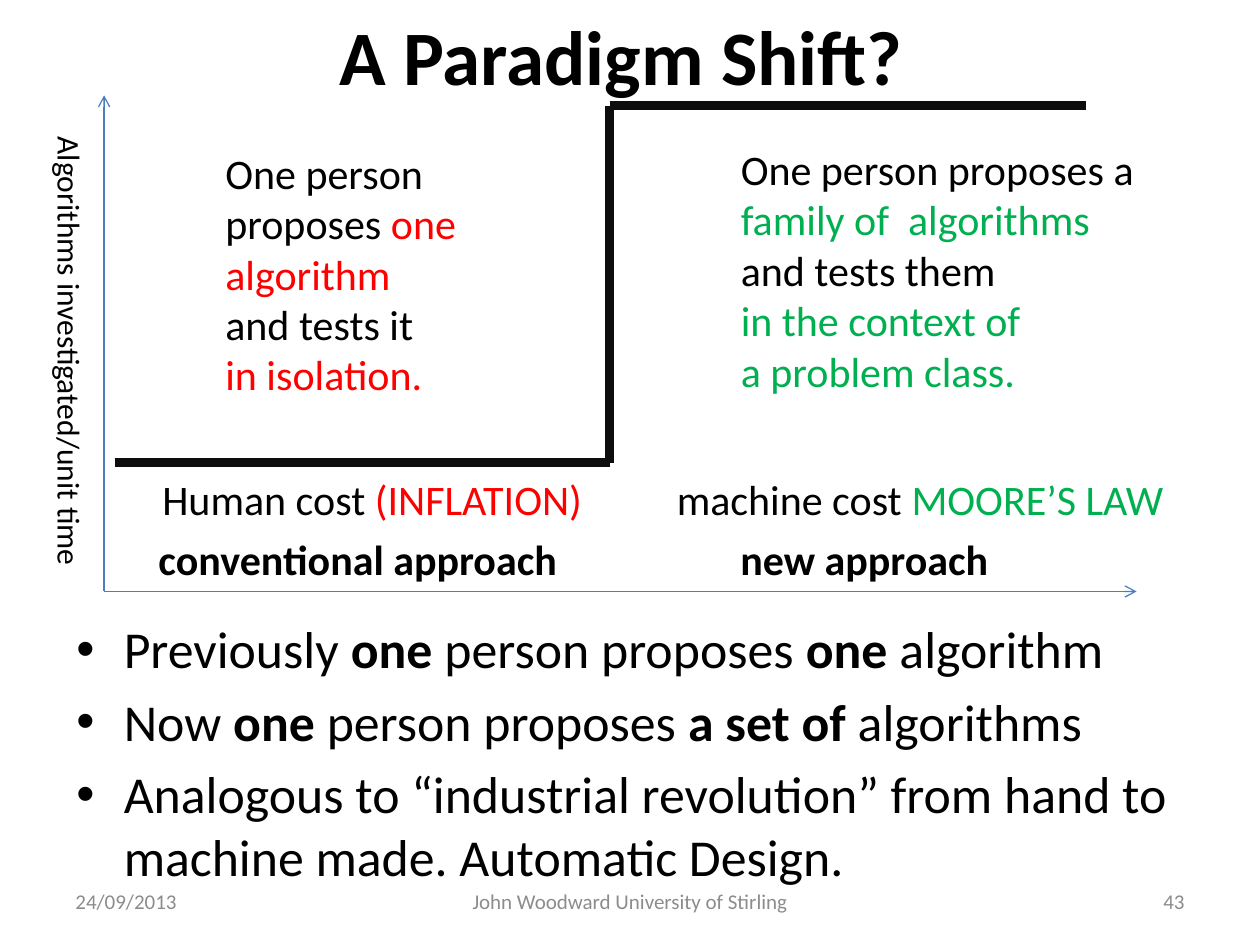
from dataclasses import dataclass
from itertools import pairwise

from lxml import etree
from pptx import Presentation
from pptx.dml.color import RGBColor
from pptx.enum.shapes import MSO_CONNECTOR
from pptx.enum.text import MSO_ANCHOR, MSO_AUTO_SIZE, PP_ALIGN
from pptx.oxml.ns import qn
from pptx.util import Pt

STRAIGHT = MSO_CONNECTOR.STRAIGHT
TOP, MIDDLE = MSO_ANCHOR.TOP, MSO_ANCHOR.MIDDLE
LEFT, CENTER, RIGHT = PP_ALIGN.LEFT, PP_ALIGN.CENTER, PP_ALIGN.RIGHT
NO_AUTOFIT = MSO_AUTO_SIZE.NONE


@dataclass(frozen=True)
class Theme:
    """Colours, font and type sizes of the slide."""

    font: str = "Calibri"
    text: str = "000000"
    old: str = "FF0000"
    new: str = "00B050"
    axis: str = "4B7EBC"
    step: str = "0D0D0D"
    footer: str = "8C8C8C"
    title_size: float = 44
    body_size: float = 29.6
    diagram_size: float = 24
    axis_size: float = 18
    footer_size: float = 12


THEME = Theme()

OLD_WAY = [
    [("One person", THEME.text)],
    [("proposes ", THEME.text), ("one", THEME.old)],
    [("algorithm", THEME.old)],
    [("and tests it", THEME.text)],
    [("in isolation.", THEME.old)],
]
NEW_WAY = [
    [("One person proposes a", THEME.text)],
    [("family of  algorithms", THEME.new)],
    [("and tests them", THEME.text)],
    [("in the context of", THEME.new)],
    [("a problem class.", THEME.new)],
]
COSTS = [[
    ("Human cost ", THEME.text),
    ("(INFLATION)", THEME.old),
    ("\tmachine cost ", THEME.text),
    ("MOORE’S LAW", THEME.new),
]]
APPROACHES = [[("conventional approach\tnew approach", THEME.text)]]
AXIS_LABEL = [[("Algorithms investigated/unit time", THEME.text)]]
BULLETS = [
    [("Previously ", False), ("one", True), (" person proposes ", False),
     ("one", True), (" algorithm", False)],
    [("Now ", False), ("one", True), (" person proposes ", False),
     ("a set of ", True), ("algorithms", False)],
    [("Analogous to “industrial revolution” from hand to machine made. "
      "Automatic Design.", False)],
]
FOOTERS = [
    ("24/09/2013", 36, 168, LEFT),
    ("John Woodward University of Stirling", 246, 228, CENTER),
    ("43", 516, 168, RIGHT),
]
AXIS_ORIGIN = (59.5, 338)
AXIS_ENDS = [(649.5, 338), (59.5, 54.5)]
STEP_POINTS = [(65.5, 264.5), (348.5, 264.5), (348.5, 60.5), (620.5, 60.5)]


def place(shape, left, top, width, height):
    """Move and size a shape, in points."""
    shape.left, shape.top = Pt(left), Pt(top)
    shape.width, shape.height = Pt(width), Pt(height)


def style_paragraph(paragraph, size, bold=None):
    """Set the font that a whole paragraph shares."""
    paragraph.font.name = THEME.font
    paragraph.font.size = Pt(size)
    paragraph.font.bold = bold


def next_paragraph(frame, index):
    """Return the first paragraph of a frame, or a new one after it."""
    return frame.add_paragraph() if index else frame.paragraphs[0]


def add_tab_stop(paragraph, position):
    """Add a left tab stop, in points from the text edge."""
    properties = paragraph._p.get_or_add_pPr()
    tab_list = etree.Element(qn("a:tabLst"))
    etree.SubElement(tab_list, qn("a:tab"), pos=str(Pt(position)), algn="l")
    properties.insert_element_before(tab_list, "a:defRPr", "a:extLst")


def add_text(slide, box, lines, size, bold=False, align=LEFT, anchor=TOP,
             wrap=True, tab=None):
    """Add a text box whose lines are lists of (text, colour) pairs."""
    shape = slide.shapes.add_textbox(*map(Pt, box))
    frame = shape.text_frame
    frame.word_wrap = wrap
    frame.vertical_anchor = anchor
    for index, line in enumerate(lines):
        paragraph = next_paragraph(frame, index)
        paragraph.alignment = align
        style_paragraph(paragraph, size, bold)
        if tab:
            add_tab_stop(paragraph, tab)
        for text, color in line:
            run = paragraph.add_run()
            run.text = text
            run.font.color.rgb = RGBColor.from_string(color)
    return shape


def add_line(slide, start, end, color, width, arrow=False):
    """Add a straight line between two points, with an optional arrowhead."""
    line = slide.shapes.add_connector(STRAIGHT, *map(Pt, start + end))
    line.line.color.rgb = RGBColor.from_string(color)
    line.line.width = Pt(width)
    if arrow:
        etree.SubElement(line.line._get_or_add_ln(), qn("a:tailEnd"), type="arrow")
    etree.SubElement(line._element.spPr, qn("a:effectLst"))


def fill_title(slide):
    """Write the title."""
    title = slide.shapes.title
    place(title, 31, -13.5, 648, 90)
    title.text_frame.text = "A Paradigm Shift?"
    title.text_frame.vertical_anchor = MIDDLE
    style_paragraph(title.text_frame.paragraphs[0], THEME.title_size, True)


def fill_bullets(slide):
    """Write the bullets, given as lists of (text, bold) pairs."""
    body = slide.placeholders[1]
    place(body, 36.5, 349, 648, 155.5)
    frame = body.text_frame
    frame.auto_size = NO_AUTOFIT
    for index, bullet in enumerate(BULLETS):
        paragraph = next_paragraph(frame, index)
        style_paragraph(paragraph, THEME.body_size)
        for text, bold in bullet:
            run = paragraph.add_run()
            run.text = text
            run.font.bold = bold


def add_diagram(slide):
    """Draw the axes, the step and their labels."""
    for end in AXIS_ENDS:
        add_line(slide, AXIS_ORIGIN, end, THEME.axis, 0.75, arrow=True)
    for start, end in pairwise(STEP_POINTS):
        add_line(slide, start, end, THEME.step, 5)
    size = THEME.diagram_size
    add_text(slide, (83.5, 301.5, 526, 36), APPROACHES, size, bold=True, tab=332.5)
    label = add_text(slide, (-91.5, 188, 263, 29), AXIS_LABEL, THEME.axis_size, wrap=False)
    label.rotation = 90
    add_text(slide, (121.7, 80.6, 153, 152.6), OLD_WAY, size, wrap=False)
    add_text(slide, (416.2, 78.5, 267, 152.6), NEW_WAY, size)
    add_text(slide, (85.7, 267, 620, 36), COSTS, size, tab=294)


def add_footers(slide):
    """Write the date, the author and the slide number."""
    for text, left, width, align in FOOTERS:
        add_text(slide, (left, 500.5, width, 28.8), [[(text, THEME.footer)]],
                 THEME.footer_size, align=align, anchor=MIDDLE)


def main():
    """Build the slide and save it."""
    presentation = Presentation()
    presentation.slide_width, presentation.slide_height = Pt(720), Pt(540)
    slide = presentation.slides.add_slide(presentation.slide_layouts[1])
    fill_title(slide)
    add_diagram(slide)
    fill_bullets(slide)
    add_footers(slide)
    presentation.save("out.pptx")


if __name__ == "__main__":
    main()
